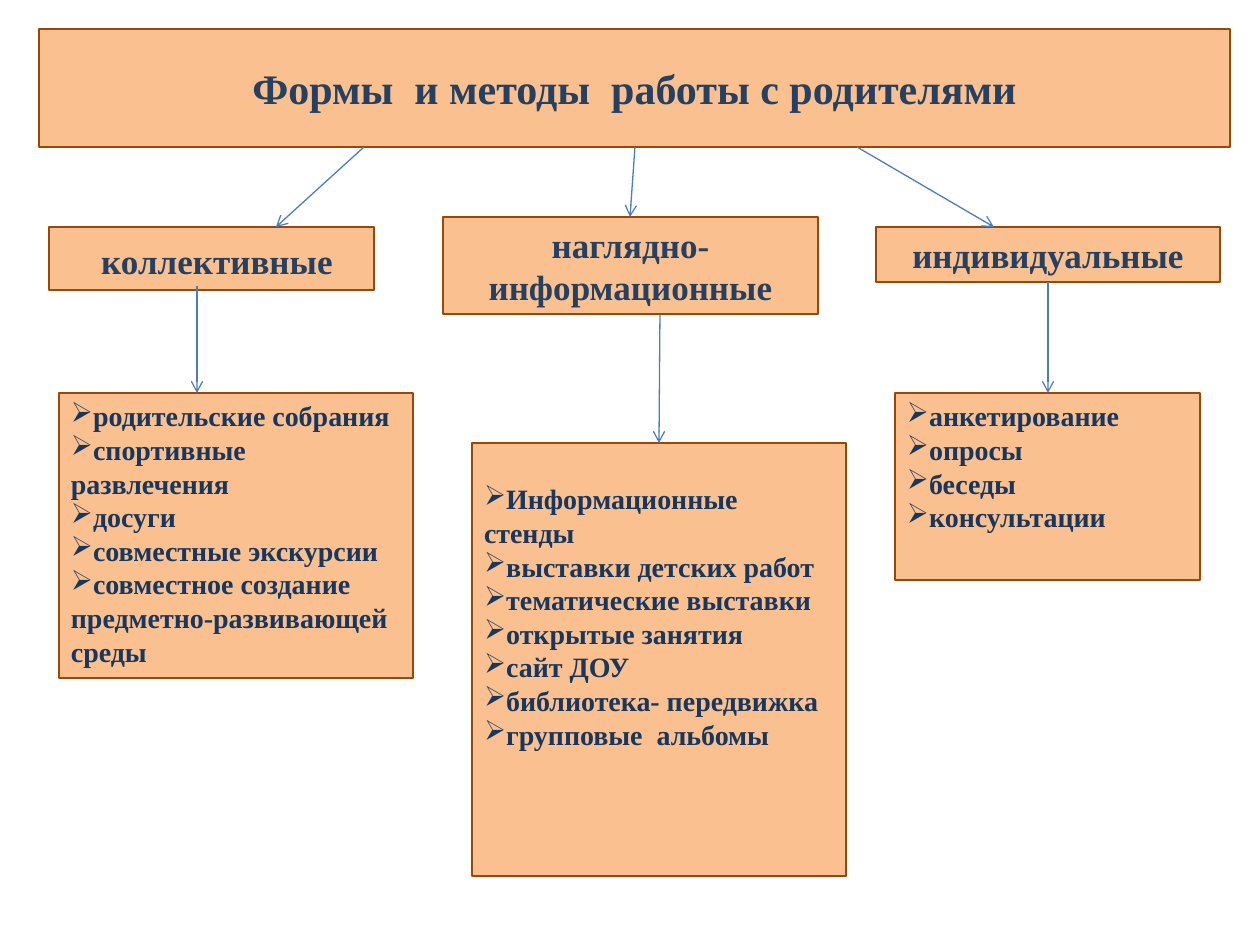
from pptx import Presentation
from pptx.dml.color import RGBColor
from pptx.enum.shapes import MSO_CONNECTOR as CONNECTOR
from pptx.enum.text import MSO_ANCHOR as ANCHOR, MSO_AUTO_SIZE as AUTO_SIZE, PP_ALIGN as ALIGN
from pptx.oxml.xmlchemy import OxmlElement
from pptx.util import Emu, Pt

# Content: frames are (left, top, width, height), arrows are (from, to), in px
TITLE = {"text": "Формы  и методы  работы с родителями", "frame": (39, 29, 1191, 118)}
BRANCHES = [
    {
        "heading": "коллективные", "heading_frame": (49, 227, 325, 63),
        "heading_inset": (23, 13),
        "items": ["родительские собрания", "спортивные развлечения", "досуги",
                  "совместные экскурсии",
                  "совместное создание предметно-развивающей среды"],
        "list_frame": (59, 393, 354, 285), "list_inset": (12, 6),
        "arrows": [((364, 147), (276, 227)), ((197, 286), (197, 393))],
    },
    {
        "heading": "наглядно-информационные", "heading_frame": (443, 217, 375, 97),
        "heading_inset": (12, 6),
        "items": ["Информационные стенды", "выставки детских работ",
                  "тематические выставки", "открытые занятия", "сайт ДОУ",
                  "библиотека- передвижка", "групповые  альбомы"],
        "list_frame": (472, 443, 374, 433), "list_inset": (12, 39),
        "arrows": [((635, 147), (630, 217)), ((660, 315), (659, 443))],
    },
    {
        "heading": "индивидуальные", "heading_frame": (876, 227, 344, 55),
        "heading_inset": (12, 6),
        "items": ["анкетирование", "опросы", "беседы", "консультации"],
        "list_frame": (895, 393, 305, 187), "list_inset": (12, 6),
        "arrows": [((857, 147), (994, 227)), ((1048, 282), (1048, 393))],
    },
]
THEME = {
    "font": "Times New Roman", "fill": "FAC090", "border": "984807", "arrow": "4B7EBC",
    "heading": "254061", "item": "17375E",
    "title_size": 24, "heading_size": 20, "item_size": 16,
    "title_line": 1, "line": 0.75,
}


def px(value):
    return Emu(round(value * 914400 / 126))


def color(name):
    return RGBColor.from_string(THEME[name])


def add_element(parent, tag, **attributes):
    element = OxmlElement(tag)
    for name, value in attributes.items():
        element.set(name, value)
    parent.append(element)


def place(box, frame, line_width):
    box.left, box.top, box.width, box.height = map(px, frame)
    box.fill.solid()
    box.fill.fore_color.rgb = color("fill")
    box.line.color.rgb = color("border")
    box.line.width = Pt(line_width)


def write(box, lines, style, size, inset=(12, 6), bullet=None, anchor=ANCHOR.TOP):
    frame = box.text_frame
    frame.word_wrap = True
    frame.auto_size = AUTO_SIZE.NONE
    frame.vertical_anchor = anchor
    frame.margin_left, frame.margin_top = map(px, inset)
    frame.margin_right, frame.margin_bottom = px(12), px(6)
    for index, line in enumerate(lines):
        para = frame.add_paragraph() if index else frame.paragraphs[0]
        para.alignment = ALIGN.LEFT if bullet else ALIGN.CENTER
        if bullet:
            add_element(para._p.get_or_add_pPr(), "a:buChar", char=bullet)
        span = para.add_run()
        span.text = line
        span.font.name = THEME["font"]
        span.font.size = Pt(size)
        span.font.bold = True
        span.font.color.rgb = color(style)


def add_arrow(page, start, end):
    arrow = page.shapes.add_connector(CONNECTOR.STRAIGHT, *map(px, start + end))
    arrow.line.color.rgb = color("arrow")
    arrow.line.width = Pt(THEME["line"])
    add_element(arrow.line._get_or_add_ln(), "a:tailEnd", type="arrow")
    add_element(arrow._element.spPr, "a:effectLst")


def main():
    deck = Presentation()
    deck.slide_width, deck.slide_height = px(1260), px(945)
    page = deck.slides.add_slide(deck.slide_layouts[5])

    # Title in a rounded frame
    title = page.shapes.title
    add_element(title._element.spPr, "a:prstGeom", prst="roundRect")
    place(title, TITLE["frame"], THEME["title_line"])
    write(title, [TITLE["text"]], "heading", THEME["title_size"], anchor=ANCHOR.MIDDLE)

    # Each branch: heading, list and two arrows
    for branch in BRANCHES:
        heading = page.shapes.add_textbox(0, 0, 0, 0)
        place(heading, branch["heading_frame"], THEME["line"])
        write(heading, [branch["heading"]], "heading", THEME["heading_size"],
              branch["heading_inset"])

        items = page.shapes.add_textbox(0, 0, 0, 0)
        place(items, branch["list_frame"], THEME["line"])
        write(items, branch["items"], "item", THEME["item_size"],
              branch["list_inset"], bullet="➢")

        for start, end in branch["arrows"]:
            add_arrow(page, start, end)

    deck.save("out.pptx")


if __name__ == "__main__":
    main()
